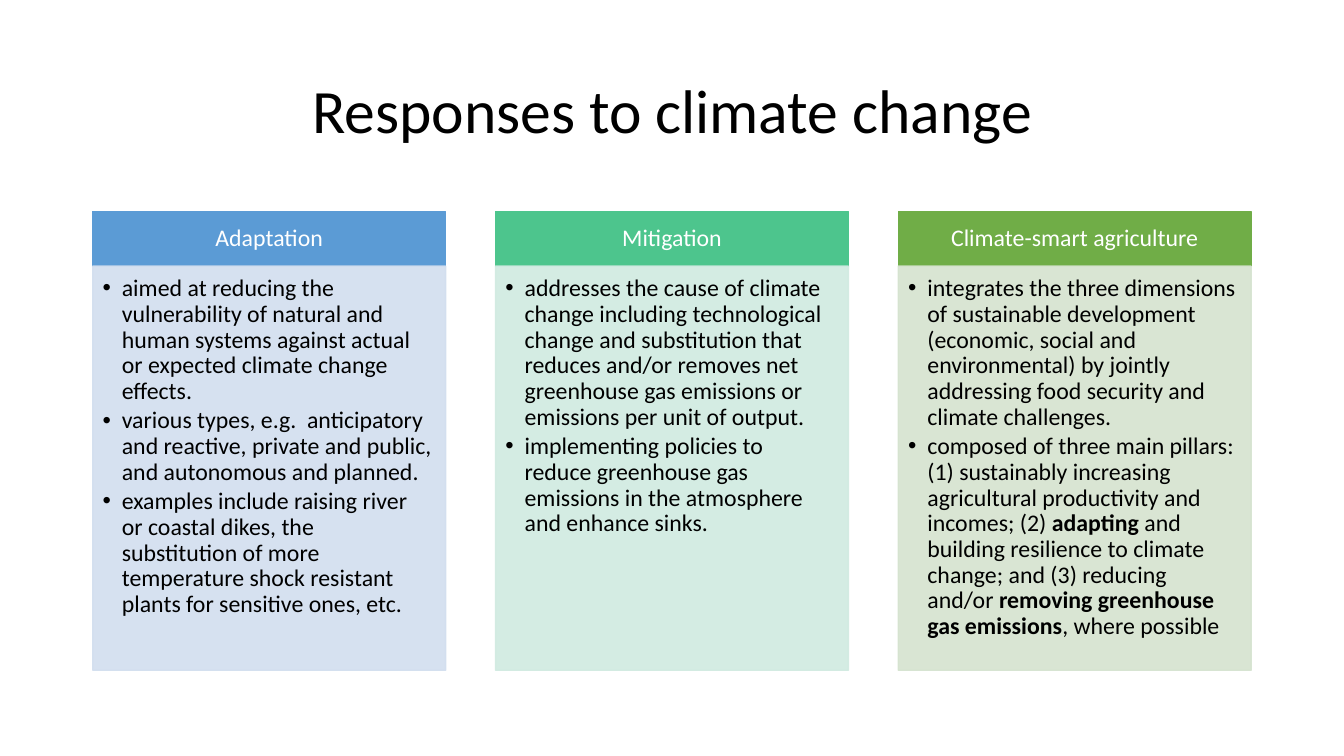
from dataclasses import dataclass

from lxml.etree import SubElement
from pptx import Presentation
from pptx.dml.color import RGBColor
from pptx.enum.shapes import MSO_SHAPE as Preset
from pptx.enum.text import MSO_ANCHOR as Anchor, PP_ALIGN as Align
from pptx.oxml.ns import qn
from pptx.shapes.autoshape import Shape
from pptx.slide import Slide
from pptx.util import Inches, Pt

FONT = "Calibri"
LEFT, TOP = 0.92, 2.1
COLUMN_WIDTH, COLUMN_PITCH = 3.5, 3.995
HEADER_HEIGHT, BODY_HEIGHT = 0.54, 4.01
BULLET_INDENT = 0.19
TEXT_SIZE = 17


@dataclass
class Response:
    heading: str
    header_color: str
    body_color: str
    points: list[str]


RESPONSES = [
    Response("Adaptation", "5B9BD5", "D2DEEF", [
        "aimed at reducing the vulnerability of natural and human systems "
        "against actual or expected climate change effects.",
        "various types, e.g.  anticipatory and reactive, private and public, "
        "and autonomous and planned.",
        "examples include raising river or coastal dikes, the substitution of "
        "more temperature shock resistant plants for sensitive ones, etc.",
    ]),
    Response("Mitigation", "4DC58D", "D0EAE1", [
        "addresses the cause of climate change including technological change "
        "and substitution that reduces and/or removes net greenhouse gas "
        "emissions or emissions per unit of output.",
        "implementing policies to reduce greenhouse gas emissions in the "
        "atmosphere and enhance sinks.",
    ]),
    Response("Climate-smart agriculture", "70AD47", "D5E3CF", [
        "integrates the three dimensions of sustainable development (economic, "
        "social and environmental) by jointly addressing food security and "
        "climate challenges.",
        "composed of three main pillars: (1) sustainably increasing "
        "agricultural productivity and incomes; (2) **adapting** and building "
        "resilience to climate change; and (3) reducing and/or **removing "
        "greenhouse gas emissions**, where possible",
    ]),
]


def rgb(color: str) -> RGBColor:
    return RGBColor.from_string(color)


def set_frame(shape: Shape, anchor: Anchor, margins: tuple[float, ...]) -> None:
    frame = shape.text_frame
    frame.word_wrap = True
    frame.vertical_anchor = anchor
    (frame.margin_left, frame.margin_top,
     frame.margin_right, frame.margin_bottom) = map(Inches, margins)


def format_paragraph(paragraph, align: Align, size: float, color: str) -> None:
    paragraph.alignment = align
    paragraph.line_spacing = 0.9
    for run in paragraph.runs:
        run.font.name = FONT
        run.font.size = Pt(size)
        run.font.color.rgb = rgb(color)


def add_title(slide: Slide, text: str) -> None:
    title = slide.shapes.add_textbox(
        Inches(LEFT), Inches(0.4), Inches(11.5), Inches(1.45))
    set_frame(title, Anchor.MIDDLE, (0.1, 0.05, 0.1, 0.05))
    title.text_frame.text = text
    format_paragraph(title.text_frame.paragraphs[0], Align.CENTER, 44, "000000")


def add_panel(slide: Slide, left: float, top: float, height: float,
              color: str, opacity: int = 100) -> Shape:
    panel = slide.shapes.add_shape(
        Preset.RECTANGLE, Inches(left), Inches(top),
        Inches(COLUMN_WIDTH), Inches(height))
    panel.shadow.inherit = False
    panel.line.width = Pt(1)
    for fill in (panel.fill, panel.line.fill):
        fill.solid()
        fill.fore_color.rgb = rgb(color)
    if opacity < 100:
        for color_element in panel.element.spPr.iter(qn("a:srgbClr")):
            SubElement(color_element, qn("a:alpha"), val=str(opacity * 1000))
    return panel


def add_bullet(paragraph, text: str) -> None:
    for index, part in enumerate(text.split("**")):
        run = paragraph.add_run()
        run.text = part
        run.font.bold = index % 2 == 1
    format_paragraph(paragraph, Align.LEFT, TEXT_SIZE, "000000")
    paragraph.level = 1
    paragraph.space_after = Pt(TEXT_SIZE * 0.15)
    properties = paragraph._p.get_or_add_pPr()
    properties.set("marL", str(Inches(BULLET_INDENT)))
    properties.set("indent", str(-Inches(BULLET_INDENT)))
    SubElement(properties, qn("a:buFont"), typeface="Arial")
    SubElement(properties, qn("a:buChar"), char="•")


def add_response(slide: Slide, response: Response, left: float) -> None:
    header = add_panel(slide, left, TOP, HEADER_HEIGHT, response.header_color)
    set_frame(header, Anchor.MIDDLE, (0.13, 0.08, 0.13, 0.08))
    header.text_frame.text = response.heading
    format_paragraph(
        header.text_frame.paragraphs[0], Align.CENTER, TEXT_SIZE, "FFFFFF")

    body = add_panel(slide, left, TOP + HEADER_HEIGHT, BODY_HEIGHT,
                     response.body_color, opacity=90)
    set_frame(body, Anchor.TOP, (0.1, 0.1, 0.13, 0.15))
    frame = body.text_frame
    for index, point in enumerate(response.points):
        add_bullet(frame.add_paragraph() if index else frame.paragraphs[0], point)


def main() -> None:
    presentation = Presentation()
    presentation.slide_width = Inches(13.33)
    presentation.slide_height = Inches(7.5)
    slide = presentation.slides.add_slide(presentation.slide_layouts[6])
    add_title(slide, "Responses to climate change")
    for column, response in enumerate(RESPONSES):
        add_response(slide, response, LEFT + column * COLUMN_PITCH)
    presentation.save("out.pptx")


if __name__ == "__main__":
    main()
